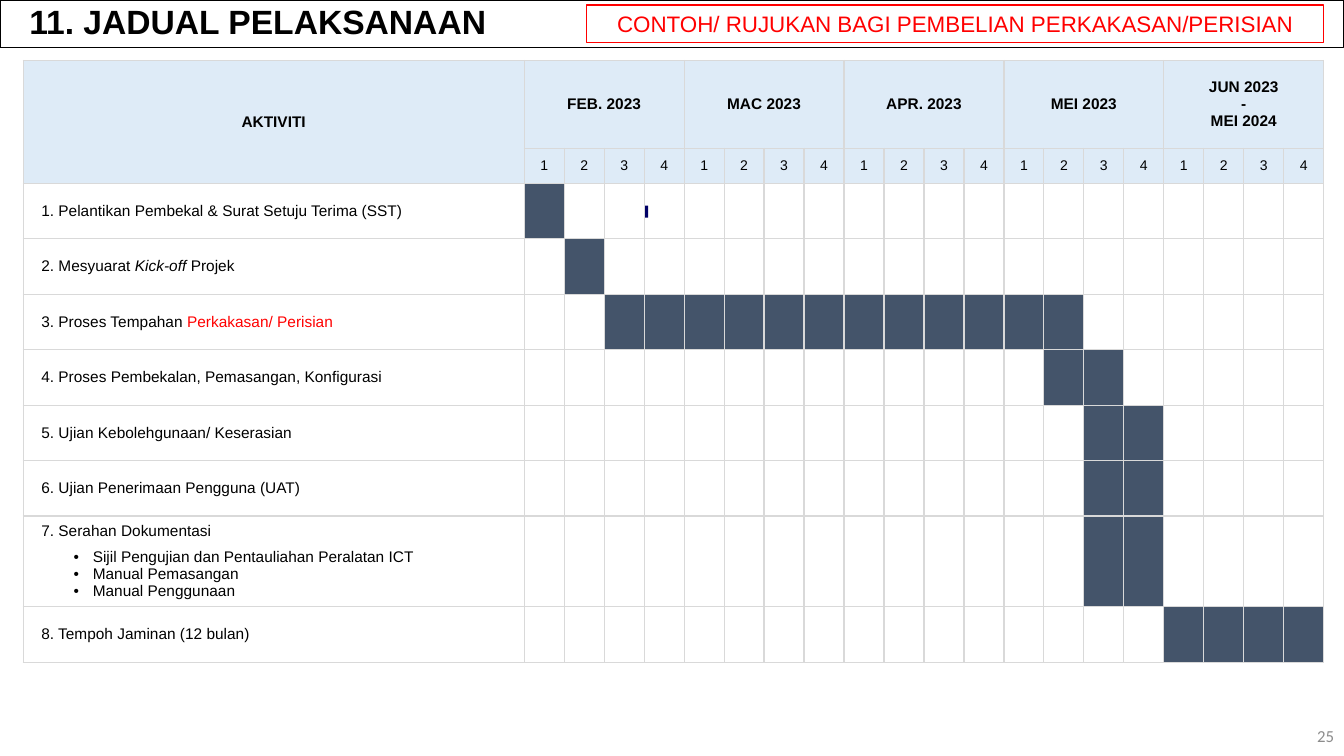
from dataclasses import dataclass

from lxml.etree import SubElement
from pptx import Presentation
from pptx.dml.color import RGBColor
from pptx.enum.shapes import MSO_SHAPE as Preset
from pptx.enum.text import MSO_ANCHOR as Anchor, MSO_AUTO_SIZE as AutoSize, PP_ALIGN as Align
from pptx.oxml.ns import qn
from pptx.util import Inches, Pt


@dataclass(frozen=True)
class Theme:
    font: str = "Arial"
    number_font: str = "Calibri"
    ink: str = "000000"
    paper: str = "FFFFFF"
    red: str = "FF0000"
    grey: str = "8C8C8C"
    grid: str = "D9D9D9"
    header: str = "DEEBF7"
    bar: str = "44546A"
    mark: str = "000066"
    title_size: int = 24
    notice_size: int = 16
    number_size: int = 12
    body_size: int = 11
    week_size: int = 10


THEME = Theme()
NO_STYLE = "{2D5ABB26-0587-4C30-8999-92F81FD0307C}"
WEEKS = 4
MONTHS = [["FEB. 2023"], ["MAC 2023"], ["APR. 2023"], ["MEI 2023"], ["JUN 2023", "-", "MEI 2024"]]

# Each activity: spans of (text, format), first week, last week
ACTIVITIES = [
    ([("1. Pelantikan Pembekal & Surat Setuju Terima (SST)", {})], 1, 1),
    ([("2. Mesyuarat ", {}), ("Kick-off ", {"italic": True}), ("Projek", {})], 2, 2),
    ([("3. Proses Tempahan ", {}), ("Perkakasan/ Perisian", {"color": THEME.red})], 3, 14),
    ([("4. Proses Pembekalan, Pemasangan, Konfigurasi", {})], 14, 15),
    ([("5. Ujian Kebolehgunaan/ Keserasian", {})], 15, 16),
    ([("6. Ujian Penerimaan Pengguna (UAT)", {})], 15, 16),
    ([("7. Serahan Dokumentasi", {})], 15, 16),
    ([("8. Tempoh Jaminan (12 bulan)", {})], 17, 20),
]
DOCUMENTS_ROW = 8
DOCUMENTS = ["Sijil Pengujian dan Pentauliahan Peralatan ICT", "Manual Pemasangan", "Manual Penggunaan"]


def rgb(value):
    return RGBColor.from_string(value)


def add_span(para, text, size, color=THEME.ink, **formats):
    span = para.add_run()
    span.text = text
    span.font.color.rgb = rgb(color)
    for name, value in {"name": THEME.font, "size": Pt(size), **formats}.items():
        setattr(span.font, name, value)


def indent(para, left, first=0):
    properties = para._p.get_or_add_pPr()
    properties.set("marL", str(Inches(left)))
    properties.set("indent", str(Inches(first)))
    return properties


def add_box(page, area, fill, line=None):
    box = page.shapes.add_shape(Preset.RECTANGLE, *map(Inches, area))
    box.shadow.inherit = False
    box.fill.solid()
    box.fill.fore_color.rgb = rgb(fill)
    if line:
        box.line.color.rgb = rgb(line)
        box.line.width = Pt(0.75)
    else:
        box.line.fill.background()
    return box


def add_title(page, text):
    title = page.shapes.title
    places = zip(("left", "top", "width", "height"), (0, 0, 13.33, 0.47))
    for name, value in places:
        setattr(title, name, Inches(value))
    title.line.color.rgb = rgb(THEME.ink)
    title.line.width = Pt(0.75)
    frame = title.text_frame
    frame.auto_size = AutoSize.NONE
    frame.vertical_anchor = Anchor.MIDDLE
    para = frame.paragraphs[0]
    indent(para, 0.19)
    para.alignment = Align.LEFT
    para.line_spacing = 0.9
    add_span(para, text, THEME.title_size, bold=True)


def add_notice(page, text):
    frame = add_box(page, (5.82, 0.05, 7.31, 0.37), THEME.paper, THEME.red).text_frame
    frame.word_wrap = True
    frame.vertical_anchor = Anchor.TOP
    frame.paragraphs[0].alignment = Align.CENTER
    add_span(frame.paragraphs[0], text, THEME.notice_size, THEME.red)


def add_page_number(page, text):
    frame = page.shapes.add_textbox(*map(Inches, (10.33, 7.1, 3, 0.4))).text_frame
    frame.word_wrap = True
    frame.vertical_anchor = Anchor.MIDDLE
    frame.paragraphs[0].alignment = Align.RIGHT
    add_span(frame.paragraphs[0], text, THEME.number_size, THEME.grey, name=THEME.number_font)


def format_cell(cell, fill=None):
    for side in ("lnL", "lnR", "lnT", "lnB"):
        line = SubElement(cell._tc.get_or_add_tcPr(), qn(f"a:{side}"), w=str(Pt(1)))
        SubElement(SubElement(line, qn("a:solidFill")), qn("a:srgbClr"), val=THEME.grid)
    if fill:
        cell.fill.solid()
        cell.fill.fore_color.rgb = rgb(fill)
    else:
        cell.fill.background()
    cell.vertical_anchor = Anchor.MIDDLE
    for side in ("left", "right", "top", "bottom"):
        setattr(cell, f"margin_{side}", 0)


def write_header(cell, lines, size, bold):
    frame = cell.text_frame
    for number, text in enumerate(lines):
        para = frame.add_paragraph() if number else frame.paragraphs[0]
        para.alignment = Align.CENTER
        add_span(para, text, size, bold=bold)


def add_bullet(frame, text):
    para = frame.add_paragraph()
    para.level = 1
    properties = indent(para, 0.69, -0.19)
    SubElement(properties, qn("a:buFont"), typeface=THEME.font)
    SubElement(properties, qn("a:buChar"), char="•")
    add_span(para, text, THEME.body_size)


def add_schedule(page):
    heights = [0.87, 0.35] + [0.55] * len(ACTIVITIES)
    heights[DOCUMENTS_ROW] = 0.9
    weeks = WEEKS * len(MONTHS)
    area = map(Inches, (0.23, 0.6, 12.9, 6))
    table = page.shapes.add_table(len(heights), weeks + 1, *area).table
    table.first_row = table.horz_banding = False
    table._tbl.tblPr.find(qn("a:tableStyleId")).text = NO_STYLE
    for row, height in zip(table.rows, heights):
        row.height = Inches(height)
    for number, column in enumerate(table.columns):
        column.width = Inches((12.9 - 4.97) / weeks if number else 4.97)

    # Grid, header band and bars
    for row in range(len(heights)):
        for week in range(weeks + 1):
            fill = THEME.header if row < 2 else None
            if row >= 2:
                _, first, last = ACTIVITIES[row - 2]
                fill = THEME.bar if first <= week <= last else None
            format_cell(table.cell(row, week), fill)

    # Header wording
    table.cell(0, 0).merge(table.cell(1, 0))
    write_header(table.cell(0, 0), ["AKTIVITI"], THEME.body_size, True)
    for number, lines in enumerate(MONTHS):
        start = 1 + number * WEEKS
        table.cell(0, start).merge(table.cell(0, start + WEEKS - 1))
        write_header(table.cell(0, start), lines, THEME.body_size, True)
        for week in range(WEEKS):
            write_header(table.cell(1, start + week), [str(week + 1)], THEME.week_size, False)

    # Activity names
    for row, (spans, _, _) in enumerate(ACTIVITIES, 2):
        para = table.cell(row, 0).text_frame.paragraphs[0]
        indent(para, 0.18)
        for text, formats in spans:
            add_span(para, text, THEME.body_size, **formats)
    documents = table.cell(DOCUMENTS_ROW, 0).text_frame
    documents.paragraphs[0].space_after = Pt(6)
    for text in DOCUMENTS:
        add_bullet(documents, text)


def main():
    deck = Presentation()
    deck.slide_width, deck.slide_height = Inches(13.33), Inches(7.5)
    page = deck.slides.add_slide(deck.slide_layouts.get_by_name("Title Only"))
    add_title(page, "11. JADUAL PELAKSANAAN")
    add_page_number(page, "25")
    add_schedule(page)
    add_notice(page, "CONTOH/ RUJUKAN BAGI PEMBELIAN PERKAKASAN/PERISIAN")
    # Small marker in the first activity row
    add_box(page, (6.4, 2.04, 0.03, 0.12), THEME.mark)
    deck.save("out.pptx")


if __name__ == "__main__":
    main()
